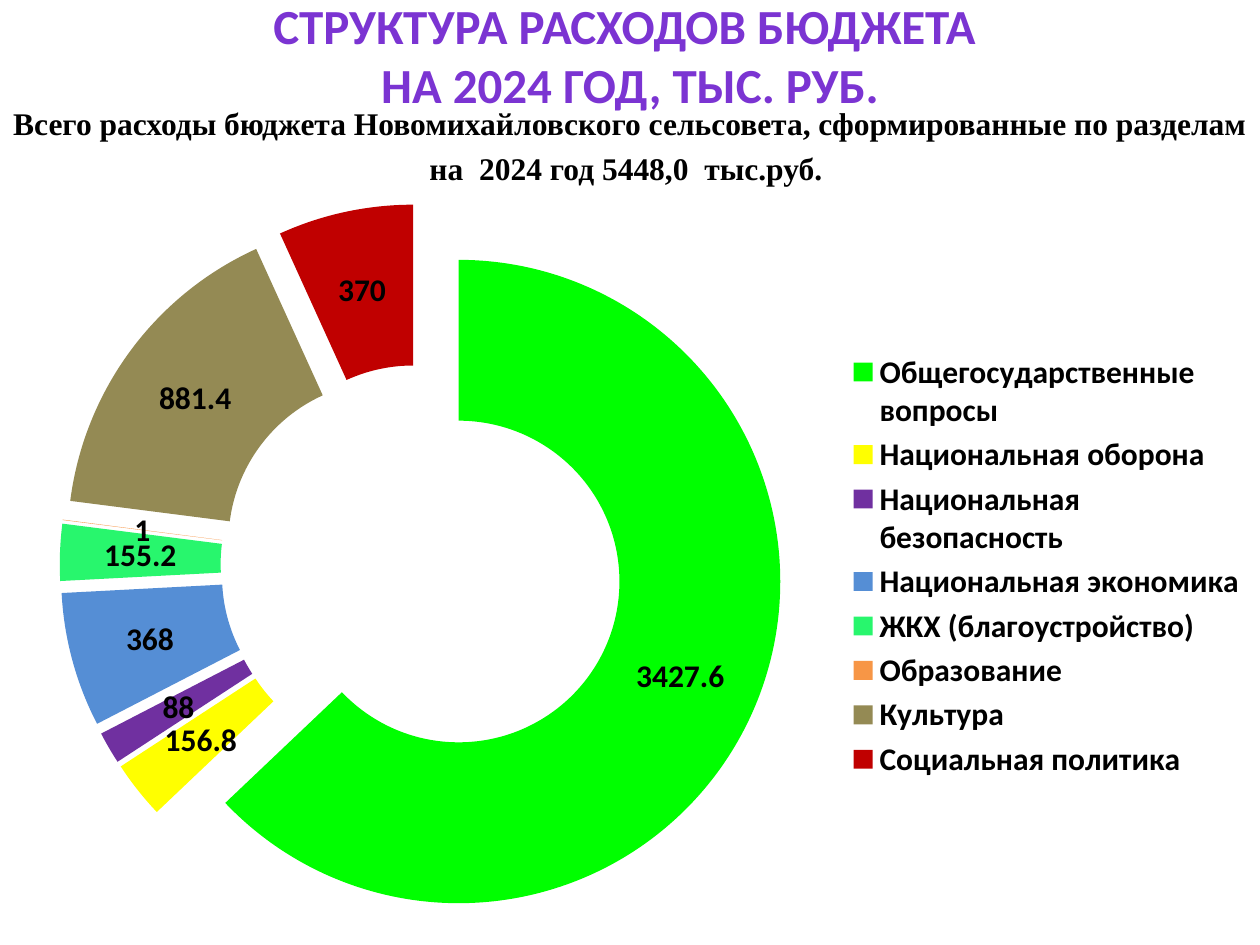
from dataclasses import dataclass

from lxml.etree import Element
from pptx import Presentation
from pptx.chart.data import CategoryChartData as ChartData
from pptx.dml.color import RGBColor as Color
from pptx.enum.chart import XL_CHART_TYPE as Kind, XL_LEGEND_POSITION as Side
from pptx.enum.text import MSO_ANCHOR as Anchor, PP_ALIGN as Align
from pptx.oxml.ns import qn
from pptx.util import Inches, Pt


@dataclass(frozen=True)
class Theme:
    sans: str = "Calibri"
    serif: str = "Times New Roman"
    title: str = "7B34D2"
    text: str = "000000"
    big: int = 28
    small: int = 18


THEME = Theme()

TITLE = ["СТРУКТУРА РАСХОДОВ БЮДЖЕТА ", "НА 2024 ГОД, ТЫС. РУБ."]
TOTAL = [
    "Всего расходы бюджета Новомихайловского сельсовета, сформированные по разделам",
    "на  2024 год 5448,0  тыс.руб. ",
]
COSTS = [
    ("Общегосударственные вопросы", 3427.6, "00FF00"),
    ("Национальная оборона", 156.8, "FFFF00"),
    ("Национальная безопасность", 88, "7030A0"),
    ("Национальная экономика", 368, "558ED5"),
    ("ЖКХ (благоустройство)", 155.2, "28F66D"),
    ("Образование", 1, "F79646"),
    ("Культура", 881.4, "948A54"),
    ("Социальная политика", 370, "C00000"),
]


def style(font, face, size, color):
    font.name, font.size, font.bold = face, Pt(size), True
    font.color.rgb = Color.from_string(color)


def add_run(para, text, *look):
    run = para.add_run()
    run.text = text
    style(run.font, *look)


def add_title(slide, box):
    title = slide.shapes.title
    title.left, title.top, title.width, title.height = box
    frame = title.text_frame
    frame.vertical_anchor = Anchor.MIDDLE
    frame.margin_top, frame.margin_bottom = 0, Inches(0.48)
    para = frame.paragraphs[0]
    para.alignment = Align.CENTER
    for i, line in enumerate(TITLE):
        if i:
            para.add_line_break()
        add_run(para, line, THEME.sans, THEME.big, THEME.title)


def add_total(slide, box):
    frame = slide.shapes.add_textbox(*box).text_frame
    frame.word_wrap = True
    frame.margin_left = frame.margin_right = Inches(0.05)
    for i, line in enumerate(TOTAL):
        para = frame.add_paragraph() if i else frame.paragraphs[0]
        para.alignment = Align.CENTER
        para.space_before = Pt(0.2 * THEME.small)
        add_run(para, line, THEME.serif, THEME.small, THEME.text)


def add_ring(slide, box):
    names, costs, colors = zip(*COSTS)
    data = ChartData()
    data.categories = names
    data.add_series("Series 1", costs)
    chart = slide.shapes.add_chart(Kind.DOUGHNUT, *box, data).chart
    look = THEME.sans, THEME.small, THEME.text
    style(chart.font, *look)
    chart.has_title = False
    chart.has_legend = True
    legend = chart.legend
    legend.position = Side.RIGHT
    legend.include_in_layout = False
    style(legend.font, *look)

    plot = chart.plots[0]
    plot.vary_by_categories = True
    ring = plot.series[0]
    gap = Element(qn("c:explosion"), val="25")
    ring._element.find(qn("c:cat")).addprevious(gap)
    for i, color in enumerate(colors):
        fill = ring.points[i].format.fill
        fill.solid()
        fill.fore_color.rgb = Color.from_string(color)
    labels = ring.data_labels
    labels.show_value = True
    labels.show_percentage = False
    labels.number_format = "General"
    labels.number_format_is_linked = False
    style(labels.font, *look)


def main():
    deck = Presentation()
    deck.slide_width, deck.slide_height = Inches(10), Inches(7.5)
    slide = deck.slides.add_slide(deck.slide_layouts[5])
    wide = Inches(10)
    add_title(slide, (0, Inches(0.16), wide, Inches(1.02)))
    add_total(slide, (0, Inches(0.78), wide, Inches(6.33)))
    add_ring(slide, (0, Inches(1.48), wide, Inches(6.02)))
    deck.save("out.pptx")


if __name__ == "__main__":
    main()
